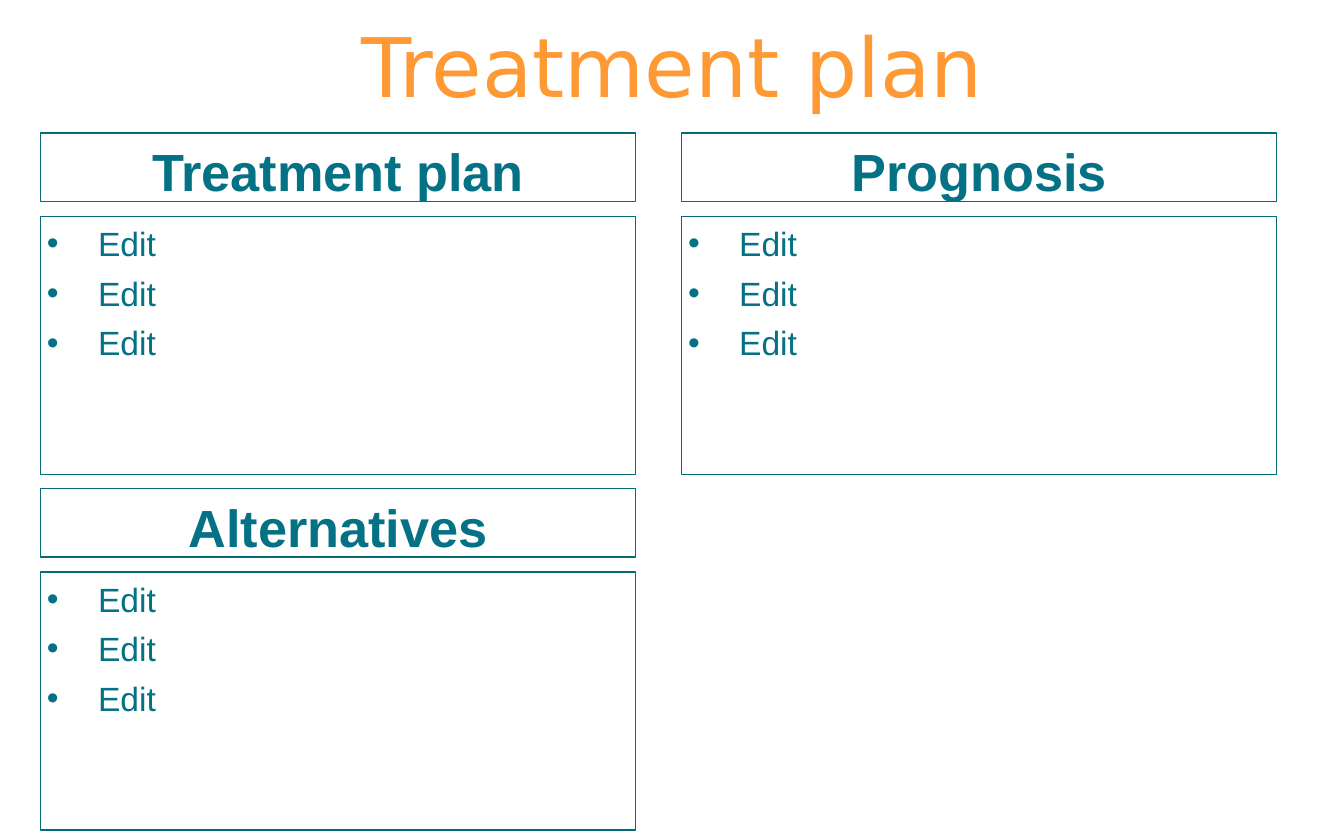
from lxml import etree
from pptx import Presentation
from pptx.dml.color import RGBColor
from pptx.enum.shapes import MSO_SHAPE
from pptx.enum.text import MSO_ANCHOR, MSO_AUTO_SIZE, PP_ALIGN
from pptx.oxml.ns import qn
from pptx.util import Inches, Pt

RECT = MSO_SHAPE.RECTANGLE
TOP, MIDDLE = MSO_ANCHOR.TOP, MSO_ANCHOR.MIDDLE
LEFT, CENTER = PP_ALIGN.LEFT, PP_ALIGN.CENTER
NO_FIT = MSO_AUTO_SIZE.NONE

ORANGE = RGBColor(0xFF, 0x99, 0x33)
TEAL = RGBColor(0x04, 0x72, 0x84)
BORDER = RGBColor(0x03, 0x6C, 0x77)

# Content: sections fill a two-column grid row by row
TITLE = "Treatment plan"
SECTIONS = [
    ("Treatment plan", ["Edit", "Edit", "Edit"]),
    ("Prognosis", ["Edit", "Edit", "Edit"]),
    ("Alternatives", ["Edit", "Edit", "Edit"]),
]

# Grid in inches
COLUMNS = 2
GRID_X, GRID_Y = 0.3, 0.99
COL_STEP, ROW_STEP = 4.77, 2.645
HEAD_W, HEAD_H = 4.43, 0.51
LIST_DY, LIST_H = 0.62, 1.92
INDENT = 0.38


def set_text(sp, lines, size, color, font, align, anchor, before=0, bold=False):
    tf = sp.text_frame
    tf.text = "\n".join(lines)
    tf.word_wrap = True
    tf.auto_size = NO_FIT
    tf.vertical_anchor = anchor
    tf.margin_left = tf.margin_right = Inches(0.05)
    tf.margin_top = tf.margin_bottom = Inches(0.05)
    for p in tf.paragraphs:
        p.alignment = align
        p.space_before = Pt(before)
        for r in p.runs:
            r.font.size = Pt(size)
            r.font.name = font
            r.font.bold = bold
            r.font.color.rgb = color


def add_box(x, y, w, h):
    sp = slide.shapes.add_shape(RECT, Inches(x), Inches(y), Inches(w), Inches(h))
    sp.shadow.inherit = False
    sp.fill.background()
    sp.line.color.rgb = BORDER
    sp.line.width = Pt(0.75)
    return sp


def add_bullets(sp):
    for p in sp.text_frame.paragraphs:
        pPr = p._p.get_or_add_pPr()
        pPr.set("marL", str(Inches(INDENT)))
        pPr.set("indent", str(-Inches(INDENT)))
        etree.SubElement(pPr, qn("a:buFont")).set("typeface", "Arial")
        etree.SubElement(pPr, qn("a:buChar")).set("char", "•")


prs = Presentation()
prs.slide_width, prs.slide_height = Inches(10), Inches(6.25)
slide = prs.slides.add_slide(prs.slide_layouts[5])

# Title
title = slide.shapes.title
title.left, title.top = Inches(0.16), Inches(0.06)
title.width, title.height = Inches(9.69), Inches(0.84)
set_text(title, [TITLE], 44, ORANGE, "DejaVu Sans", CENTER, MIDDLE)

# Sections: a heading box above a list box
for i, (heading, items) in enumerate(SECTIONS):
    row, col = divmod(i, COLUMNS)
    x, y = GRID_X + col * COL_STEP, GRID_Y + row * ROW_STEP

    box = add_box(x, y + LIST_DY, HEAD_W, LIST_H)
    set_text(box, items, 18, TEAL, "Arial", LEFT, TOP, before=5)
    add_bullets(box)

    head = add_box(x, y, HEAD_W, HEAD_H)
    set_text(head, [heading], 28, TEAL, "Arial", CENTER, TOP, before=16, bold=True)

prs.save("out.pptx")
